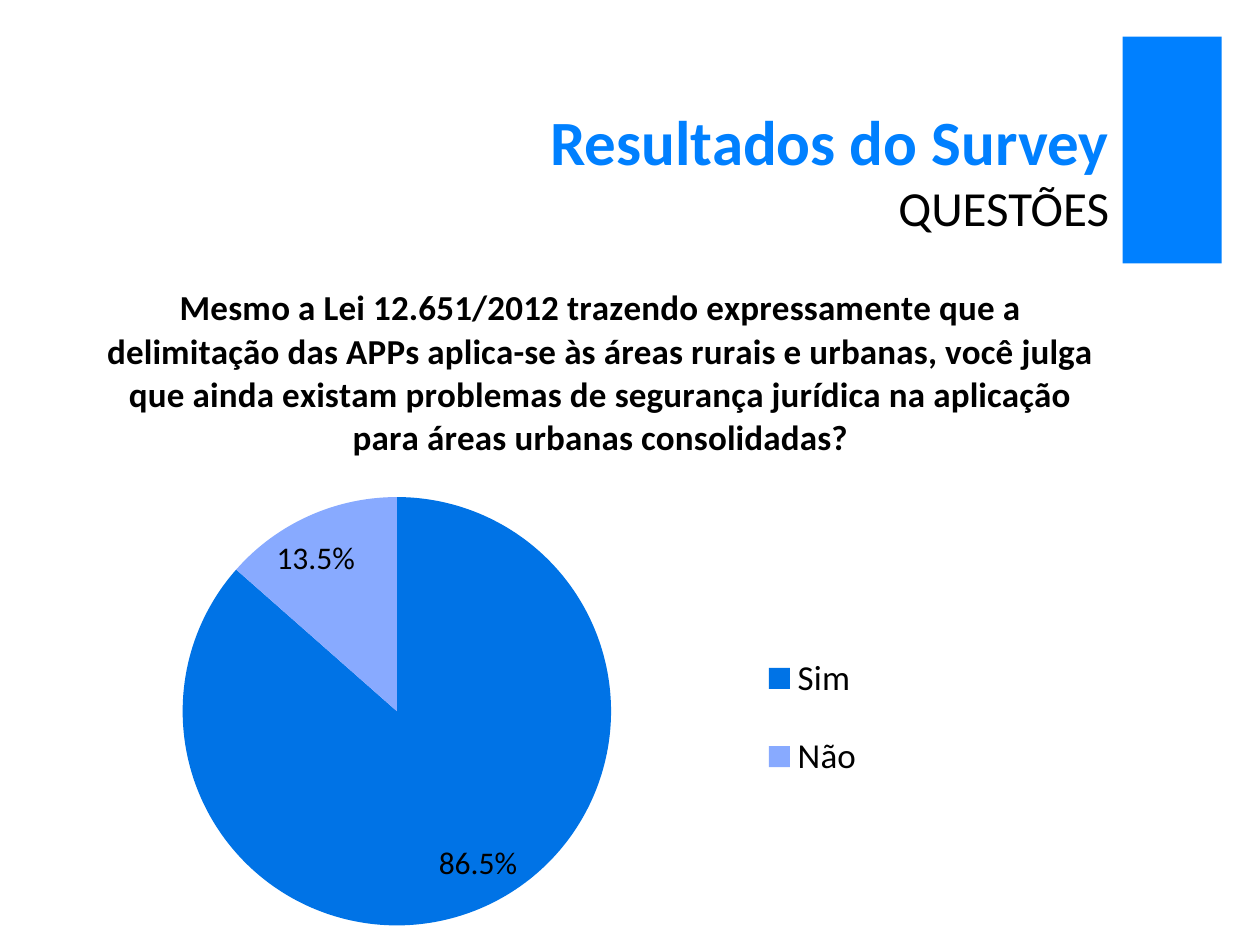
from pptx import Presentation, util as u
from pptx.chart.data import CategoryChartData
from pptx.dml.color import RGBColor
from pptx.enum import chart as ch, shapes, text
from pptx.oxml import parse_xml
from pptx.oxml.ns import nsdecls, qn

BLUE, BLACK, WHITE = "0080FF", "000000", "FFFFFF"


def tint(code):
    return RGBColor.from_string(code)


def put(item, **vals):
    for key, val in vals.items():
        setattr(item, key, val)


def place(prev, mode="edge", inner=False, **vals):
    target = '<c:layoutTarget val="inner"/>' if inner else ""
    modes = "".join(f'<c:{key}Mode val="{mode}"/>' for key in "xy")
    sizes = "".join(f'<c:{key} val="{val}"/>' for key, val in vals.items())
    for old in prev.getparent().findall(qn("c:layout")):
        prev.getparent().remove(old)
    prev.addnext(parse_xml(
        f'<c:layout {nsdecls("c")}><c:manualLayout>{target}{modes}{sizes}'
        f'</c:manualLayout></c:layout>'))


class Deck:
    face = "Calibri"

    def __init__(self, wide, high):
        self.prs = Presentation()
        put(self.prs, slide_width=u.Cm(wide), slide_height=u.Cm(high))
        self.slide = self.prs.slides.add_slide(self.prs.slide_layouts[5])

    def font(self, font, size, color=BLACK, bold=False):
        put(font, name=self.face, size=u.Pt(size), bold=bold)
        font.color.rgb = tint(color)

    def paint(self, fill, color):
        fill.solid()
        fill.fore_color.rgb = tint(color)

    def bar(self, box, color):
        shape = self.slide.shapes.add_shape(
            shapes.MSO_SHAPE.RECTANGLE, *map(u.Cm, box))
        shape.shadow.inherit = False
        self.paint(shape.fill, color)
        shape.line.fill.background()

    def title(self, box, runs):
        shape = self.slide.shapes.title
        put(shape, **dict(zip(("left", "top", "width", "height"), map(u.Cm, box))))
        self.paint(shape.fill, WHITE)
        self.paint(shape.line.fill, WHITE)
        shape.line.width = u.Pt(0.75)
        frame = shape.text_frame
        put(frame, vertical_anchor=text.MSO_ANCHOR.BOTTOM, word_wrap=True,
            auto_size=text.MSO_AUTO_SIZE.NONE)
        para = frame.paragraphs[0]
        para.alignment = text.PP_ALIGN.RIGHT
        for i, (words, style) in enumerate(runs):
            if i:
                para.add_line_break()
            run = para.add_run()
            run.text = words
            self.font(run.font, **style)

    def pie(self, box, head, parts):
        data = CategoryChartData(number_format="0.0%")
        data.categories = [part[0] for part in parts]
        data.add_series("Series 1", [part[1] for part in parts])
        chart = self.slide.shapes.add_chart(
            ch.XL_CHART_TYPE.PIE, *map(u.Cm, box), data).chart
        self.font(chart.font, 18)

        chart.has_title = True
        frame = chart.chart_title.text_frame
        frame.text = head
        self.font(frame.paragraphs[0].runs[0].font, 20, bold=True)
        chart.chart_title.include_in_layout = False
        place(chart.chart_title._element.tx, x=0.08, y=0.045)

        chart.has_legend = True
        key = chart.legend
        put(key, position=ch.XL_LEGEND_POSITION.RIGHT, include_in_layout=False)
        self.font(key.font, 20)
        place(key._element.legendPos, x=0.595, y=0.515, w=0.1, h=0.26)

        plot = chart.plots[0]
        plot.vary_by_categories = True
        area = plot._element.getparent()
        if area.find(qn("c:layout")) is None:
            area.insert(0, parse_xml(f'<c:layout {nsdecls("c")}/>'))
        spot = area.find(qn("c:layout"))
        spot.append(parse_xml(
            f'<c:manualLayout {nsdecls("c")}><c:layoutTarget val="inner"/>'
            '<c:xMode val="edge"/><c:yMode val="edge"/><c:x val="0.145"/>'
            '<c:y val="0.334"/><c:w val="0.34"/><c:h val="0.605"/>'
            '</c:manualLayout>'))
        row = plot.series[0]
        tags = row.data_labels
        put(tags, show_value=True, show_percentage=False, number_format="0.0%",
            number_format_is_linked=False,
            position=ch.XL_LABEL_POSITION.INSIDE_END)
        self.font(tags.font, 18)
        for i, (_, _, color, dx, dy) in enumerate(parts):
            point = row.points[i]
            self.paint(point.format.fill, color)
            tag = point.data_label
            tag.position = ch.XL_LABEL_POSITION.INSIDE_END
            self.font(tag.font, 18)
            place(tag._get_or_add_dLbl().find(qn("c:idx")), "factor", x=dx, y=dy)


def main():
    deck = Deck(25.4, 19.05)
    deck.bar((22.63, 0.74, 2, 4.57), BLUE)
    deck.title((1.12, 1.52, 21.49, 3.38), [
        ("Resultados do Survey", dict(size=36, color=BLUE, bold=True)),
        ("QUESTÕES", dict(size=28)),
    ])
    deck.pie(
        (0, 4.9, 25.4, 14.83),
        "Mesmo a Lei 12.651/2012 trazendo expressamente que a delimitação das "
        "APPs aplica-se às áreas rurais e urbanas, você julga que ainda existam "
        "problemas de segurança jurídica na aplicação para áreas urbanas "
        "consolidadas?",
        [("Sim", 0.865, "0073E6", 0.028, -0.023),
         ("Não", 0.135, "88AAFF", -0.028, 0.023)])
    deck.prs.save("out.pptx")


if __name__ == "__main__":
    main()
